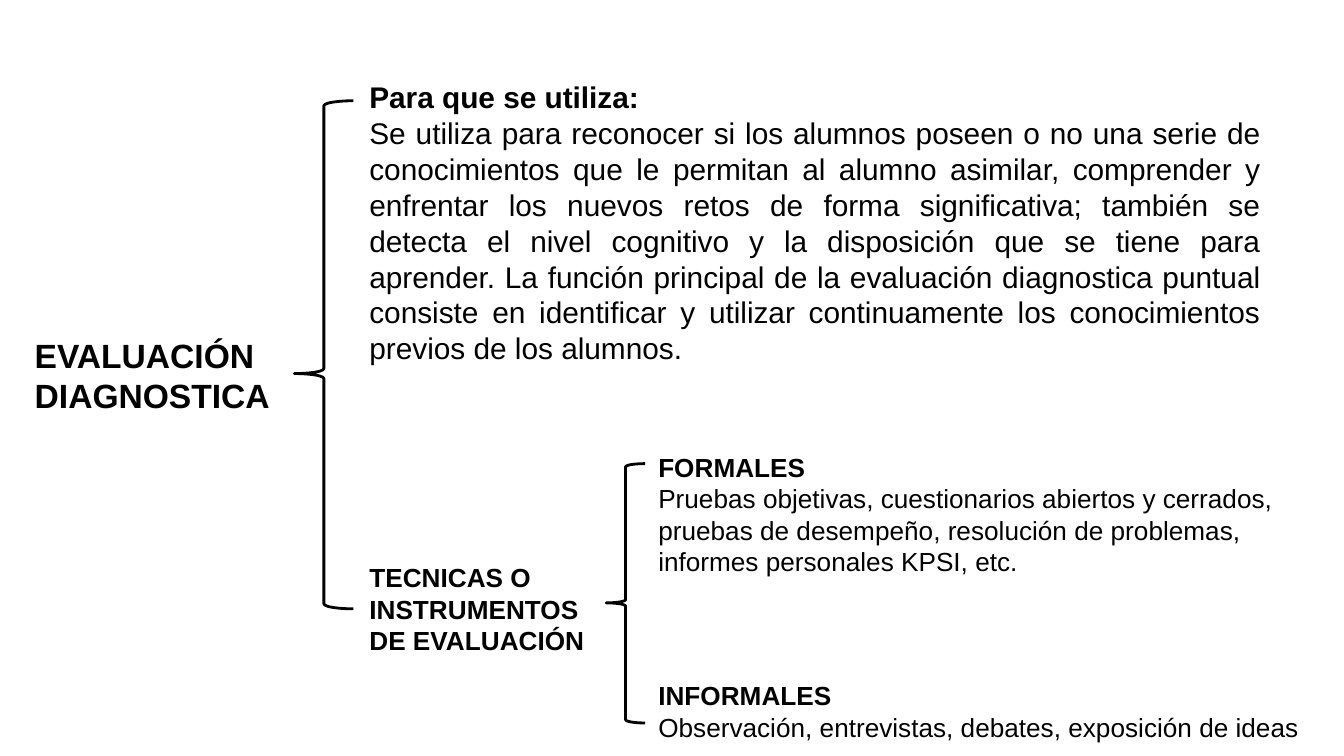
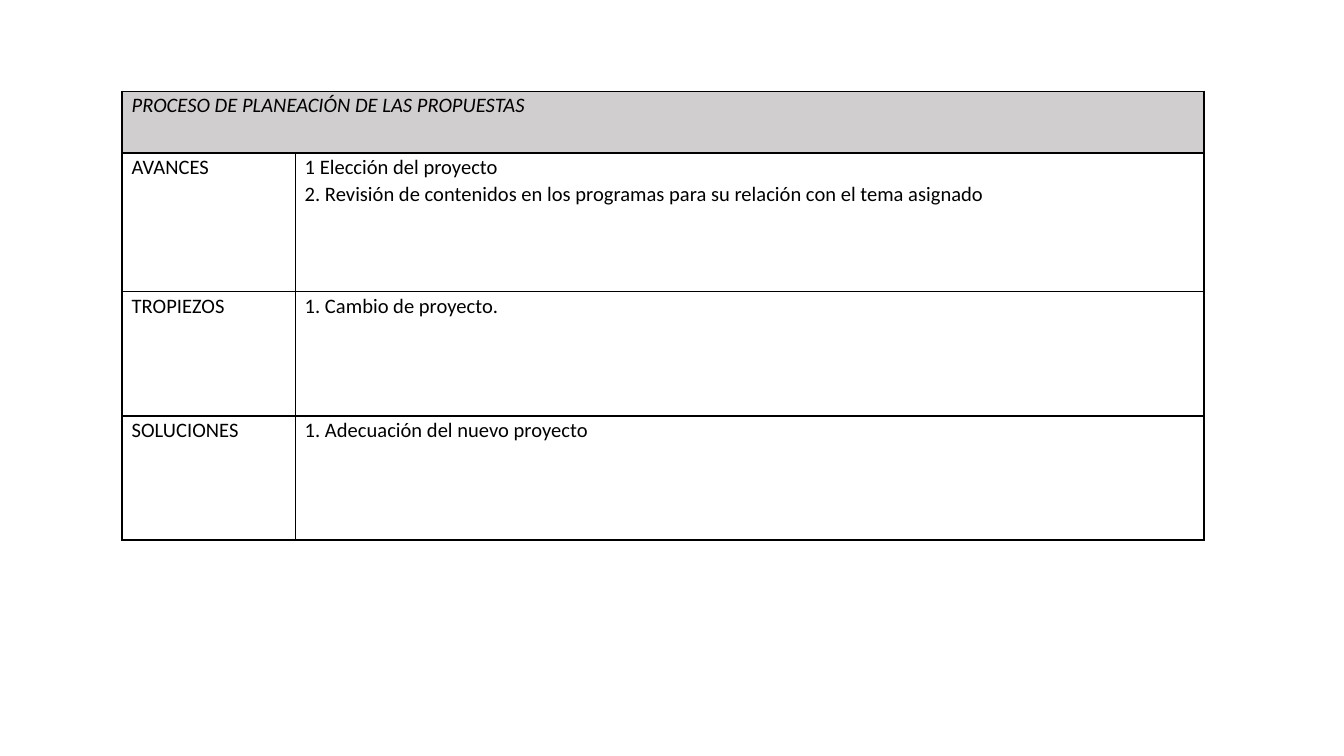
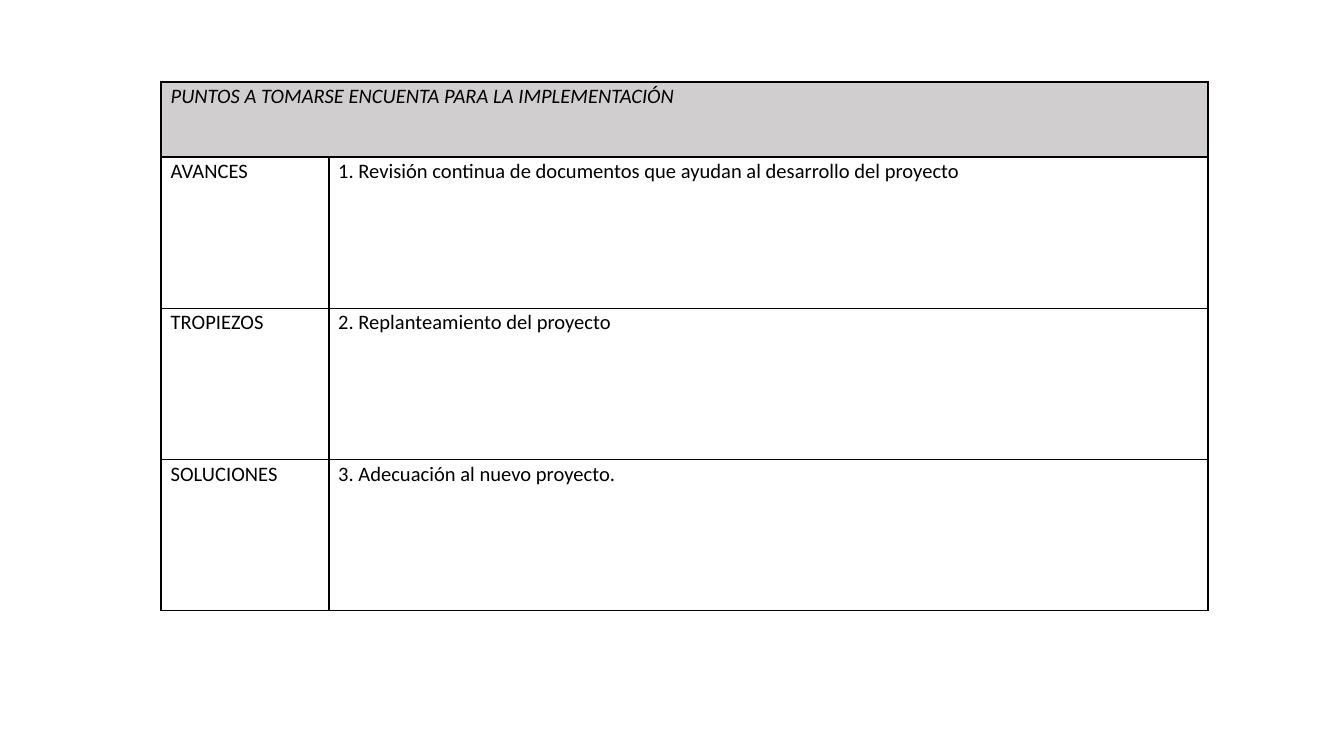
from lxml import etree
from pptx import Presentation
from pptx import util as u
from pptx.dml import color
from pptx.enum import shapes, text
from pptx.oxml import ns

COLORS = {"ink": "000000", "header": "D0CECE", "paper": "FFFFFF"}
SCHEME_FONT, TABLE_FONT = "Arial", "Calibri"
SLIDE_W = u.Inches(10)
SLIDE_H = u.Emu(SLIDE_W * 9 // 16)
COL, ROW = SLIDE_W / 100, SLIDE_H / 56.25


def rgb(name):
    return color.RGBColor.from_string(COLORS[name])


def grid(left, top, width, height):
    return [round(n) for n in (left * COL, top * ROW, width * COL, height * ROW)]


def within(region, part):
    return grid(region[0] + part[0], region[1] + part[1], part[2], part[3])


def add_run(paragraph, words, font, size, bold=False, italic=False):
    run = paragraph.add_run()
    run.text = words
    run.font.name, run.font.size = font, u.Pt(size)
    run.font.bold, run.font.italic = bold, italic
    run.font.color.rgb = rgb("ink")


def paragraphs(frame, count):
    return [frame.paragraphs[0]] + [frame.add_paragraph() for _ in range(count - 1)]


def new_slide(deck):
    slide = deck.slides.add_slide(deck.slide_layouts[6])
    slide.background.fill.solid()
    slide.background.fill.fore_color.rgb = rgb("paper")
    return slide


def add_concept(slide, region, part, size, heading, detail=None, align=None):
    frame = slide.shapes.add_textbox(*within(region, part)).text_frame
    frame.word_wrap = True
    frame.auto_size = text.MSO_AUTO_SIZE.SHAPE_TO_FIT_TEXT
    lines = [heading, detail] if detail else [heading]
    for paragraph, words in zip(paragraphs(frame, len(lines)), lines):
        paragraph.alignment = align
        add_run(paragraph, words, SCHEME_FONT, size, bold=words == heading)


def add_brace(slide, region, part):
    brace = slide.shapes.add_shape(shapes.MSO_SHAPE.LEFT_BRACE, *within(region, part))
    brace.adjustments[0], brace.adjustments[1] = 0.083, 0.537
    brace.shadow.inherit = False
    brace.fill.background()
    brace.line.color.rgb = rgb("ink")
    brace.line.width = u.Pt(1.5)


def add_purpose(slide, region):
    add_brace(slide, region, (20.3, 2.1, 4.4, 37.8))
    add_concept(slide, region, (0, 19, 20.1, 7.1), 18, "EVALUACIÓN DIAGNOSTICA")
    add_concept(
        slide, region, (24.9, 0, 68.3, 22.6), 16, "Para que se utiliza:",
        "Se utiliza para reconocer si los alumnos poseen o no una serie de "
        "conocimientos que le permitan al alumno asimilar, comprender y enfrentar "
        "los nuevos retos de forma significativa; también se detecta el nivel "
        "cognitivo y la disposición que se tiene para aprender. La función "
        "principal de la evaluación diagnostica puntual consiste en identificar "
        "y utilizar continuamente los conocimientos previos de los alumnos.",
        text.PP_ALIGN.JUSTIFY)


def add_techniques(slide, region):
    add_concept(slide, region, (0, 8.2, 19.8, 8.1), 14,
                "TECNICAS O INSTRUMENTOS DE EVALUACIÓN")
    add_brace(slide, region, (18.6, 1.4, 2.9, 19.3))
    add_concept(slide, region, (21.5, 17, 50, 5.7), 14, "INFORMALES",
                "Observación, entrevistas, debates, exposición de ideas")
    add_concept(slide, region, (21.5, 0, 50, 10.4), 14, "FORMALES",
                "Pruebas objetivas, cuestionarios abiertos y cerrados, pruebas de "
                "desempeño, resolución de problemas, informes personales KPSI, etc.")


def scheme_slide(deck):
    slide = new_slide(deck)
    add_purpose(slide, (1.6, 5.4, 93.2, 39.9))
    add_techniques(slide, (26.5, 33.1, 71.5, 22.7))


def add_borders(cell):
    props = cell._tc.get_or_add_tcPr()
    for side in ("lnL", "lnR", "lnT", "lnB"):
        line = etree.SubElement(props, ns.qn("a:" + side), w=str(u.Pt(1)))
        fill = etree.SubElement(line, ns.qn("a:solidFill"))
        etree.SubElement(fill, ns.qn("a:srgbClr"), val=COLORS["ink"])


def fill_cell(cell, lines, header=False):
    cell.margin_left = cell.margin_right = u.Inches(0.07)
    cell.margin_top = cell.margin_bottom = 0
    add_borders(cell)
    if header:
        cell.fill.solid()
        cell.fill.fore_color.rgb = rgb("header")
    else:
        cell.fill.background()
    for paragraph, words in zip(paragraphs(cell.text_frame, len(lines)), lines):
        paragraph.line_spacing = 1.07
        add_run(paragraph, words, TABLE_FONT, 11, italic=header)


def progress_slide(deck, region, row_heights, title, progress, setbacks, solutions):
    slide = new_slide(deck)
    stages = [("AVANCES", progress), ("TROPIEZOS", setbacks), ("SOLUCIONES", solutions)]
    box = grid(*region)
    table = slide.shapes.add_table(len(stages) + 1, 2, *box).table
    table.first_row = table.horz_banding = False
    for column, share in zip(table.columns, (0.16, 0.84)):
        column.width = round(box[2] * share)
    for row, height in zip(table.rows, row_heights):
        row.height = round(height * ROW)
    table.cell(0, 0).merge(table.cell(0, 1))
    fill_cell(table.cell(0, 0), [title], header=True)
    add_borders(table.cell(0, 1))
    for index, (stage, points) in enumerate(stages, 1):
        fill_cell(table.cell(index, 0), [stage])
        fill_cell(table.cell(index, 1), points)


def main():
    deck = Presentation()
    deck.slide_width, deck.slide_height = SLIDE_W, SLIDE_H
    scheme_slide(deck)
    progress_slide(
        deck, (9.1, 6.8, 80.5, 33.4), (4.6, 10.3, 9.25, 9.25),
        "PROCESO DE PLANEACIÓN DE LAS PROPUESTAS",
        ["1 Elección del proyecto",
         "2. Revisión de contenidos en los programas para su relación con el tema asignado"],
        ["1. Cambio de proyecto."],
        ["1. Adecuación del nuevo proyecto"])
    progress_slide(
        deck, (12, 6.1, 77.9, 39.35), (5.6, 11.25, 11.25, 11.25),
        "PUNTOS A TOMARSE ENCUENTA PARA LA IMPLEMENTACIÓN",
        ["1. Revisión continua de documentos que ayudan al desarrollo del proyecto"],
        ["2. Replanteamiento del proyecto"],
        ["3. Adecuación al nuevo proyecto."])
    deck.save("out.pptx")


if __name__ == "__main__":
    main()
